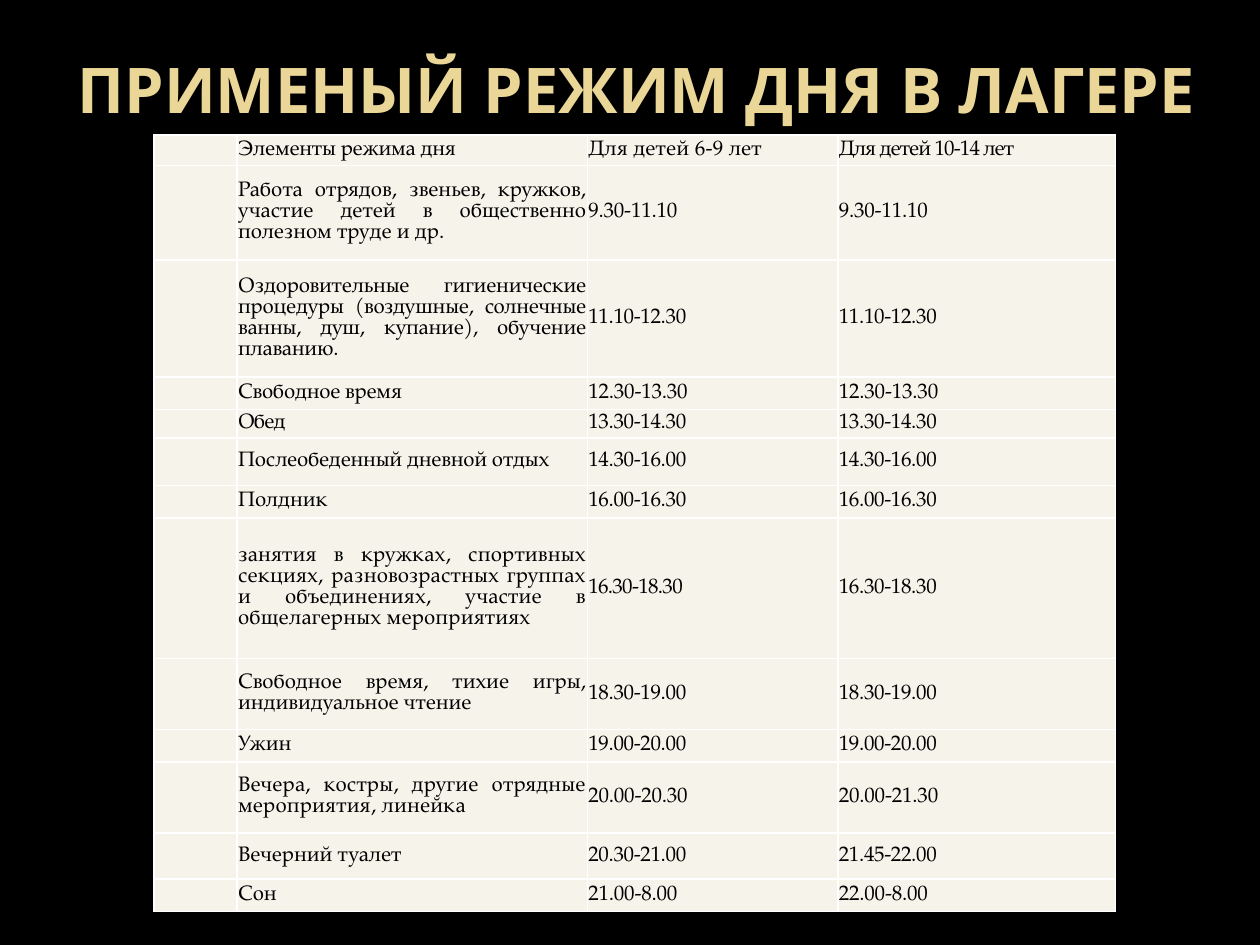
from lxml.etree import SubElement
from pptx import Presentation
from pptx.dml.color import RGBColor
from pptx.enum.text import MSO_ANCHOR, MSO_AUTO_SIZE, PP_ALIGN
from pptx.oxml.ns import qn
from pptx.util import Cm, Pt

BLACK = RGBColor(0x00, 0x00, 0x00)
WHITE = RGBColor(0xFF, 0xFF, 0xFF)
GOLD = RGBColor(0xEA, 0xD6, 0x96)
CREAM = RGBColor(0xF6, 0xF3, 0xEA)

TITLE = "ПРИМЕНЫЙ РЕЖИМ ДНЯ В ЛАГЕРЕ"
COLUMN_WIDTHS = [1.68, 7.06, 5.05, 5.6]

# Row height in cm, three texts, letter spacing of each in hundredths of a point
SCHEDULE = [
    (0.62, ("Элементы режима дня", "Для детей 6-9 лет", "Для детей 10-14 лет"), (-10, 10, -50)),
    (1.9, ("Работа отрядов, звеньев, кружков, участие детей в общественно полезном труде и др.",
           "9.30-11.10", "9.30-11.10"), (0, -10, -10)),
    (2.36, ("Оздоровительные гигиенические процедуры (воздушные, солнечные ванны, душ, купание), "
            "обучение плаванию.", "11.10-12.30", "11.10-12.30"), (-10, -20, -20)),
    (0.66, ("Свободное время", "12.30-13.30", "12.30-13.30"), (-10, -10, -10)),
    (0.57, ("Обед", "13.30-14.30", "13.30-14.30"), (-50, -20, -20)),
    (0.96, ("Послеобеденный дневной отдых", "14.30-16.00", "14.30-16.00"), (-10, -20, -20)),
    (0.65, ("Полдник", "16.00-16.30", "16.00-16.30"), (0, -20, -20)),
    (2.84, ("занятия в кружках, спортивных секциях, разновозрастных группах и объединениях, "
            "участие в общелагерных мероприятиях", "16.30-18.30", "16.30-18.30"), (10, -40, -20)),
    (1.43, ("Свободное время, тихие игры, индивидуальное чтение",
            "18.30-19.00", "18.30-19.00"), (0, -20, -20)),
    (0.65, ("Ужин", "19.00-20.00", "19.00-20.00"), (0, -20, -20)),
    (1.43, ("Вечера, костры, другие отрядные мероприятия, линейка",
            "20.00-20.30", "20.00-21.30"), (10, -10, -10)),
    (0.93, ("Вечерний туалет", "20.30-21.00", "21.45-22.00"), (0, -20, -20)),
    (0.66, ("Сон", "21.00-8.00", "22.00-8.00"), (0, -10, -10)),
]


def set_font(paragraph, name, size, color, bold=False):
    font = paragraph.font
    font.name, font.size, font.bold = name, Pt(size), bold
    font.color.rgb = color


def set_borders(cell):
    properties = cell._tc.get_or_add_tcPr()
    for position, side in enumerate(("lnL", "lnR", "lnT", "lnB")):
        line = SubElement(properties, qn(f"a:{side}"), w=str(Pt(1)))
        fill = SubElement(line, qn("a:solidFill"))
        SubElement(fill, qn("a:srgbClr"), val=str(WHITE))
        properties.insert(position, line)


def fill_cell(cell, text, spacing):
    cell.fill.solid()
    cell.fill.fore_color.rgb = CREAM
    set_borders(cell)
    cell.vertical_anchor = MSO_ANCHOR.MIDDLE
    cell.margin_left = cell.margin_right = cell.margin_top = Cm(0.02)
    cell.margin_bottom = 0
    paragraph = cell.text_frame.paragraphs[0]
    paragraph.alignment = PP_ALIGN.JUSTIFY
    paragraph.line_spacing = Pt(12)
    set_font(paragraph, "TeX Gyre Pagella", 12, BLACK)
    if text:
        run = paragraph.add_run()
        run.text = text
        run._r.get_or_add_rPr().set("spc", str(spacing))


def main():
    presentation = Presentation()
    presentation.slide_width, presentation.slide_height = Cm(25.4), Cm(19.05)
    slide = presentation.slides.add_slide(presentation.slide_layouts[0])
    slide.background.fill.solid()
    slide.background.fill.fore_color.rgb = BLACK

    # Title
    title, subtitle = slide.placeholders
    subtitle._element.getparent().remove(subtitle._element)
    title.left, title.top, title.width, title.height = Cm(1.3), Cm(0.53), Cm(23.06), Cm(2.01)
    frame = title.text_frame
    frame.text = TITLE
    frame.auto_size = MSO_AUTO_SIZE.NONE
    frame.vertical_anchor = MSO_ANCHOR.BOTTOM
    frame.margin_left = frame.margin_right = Cm(0.13)
    frame.margin_top = frame.margin_bottom = 0
    heading = frame.paragraphs[0]
    heading.alignment = PP_ALIGN.CENTER
    set_font(heading, "Open Sans", 36, GOLD, bold=True)

    # Daily schedule, with an empty first column
    heights = [height for height, _, _ in SCHEDULE]
    schedule = slide.shapes.add_table(
        len(SCHEDULE), len(COLUMN_WIDTHS), Cm(3.1), Cm(2.72),
        Cm(sum(COLUMN_WIDTHS)), Cm(sum(heights))).table
    for column, width in zip(schedule.columns, COLUMN_WIDTHS):
        column.width = Cm(width)
    for row, (height, texts, spacings) in zip(schedule.rows, SCHEDULE):
        row.height = Cm(height)
        for cell, text, spacing in zip(row.cells, ("", *texts), (0, *spacings)):
            fill_cell(cell, text, spacing)

    presentation.save("out.pptx")


if __name__ == "__main__":
    main()
